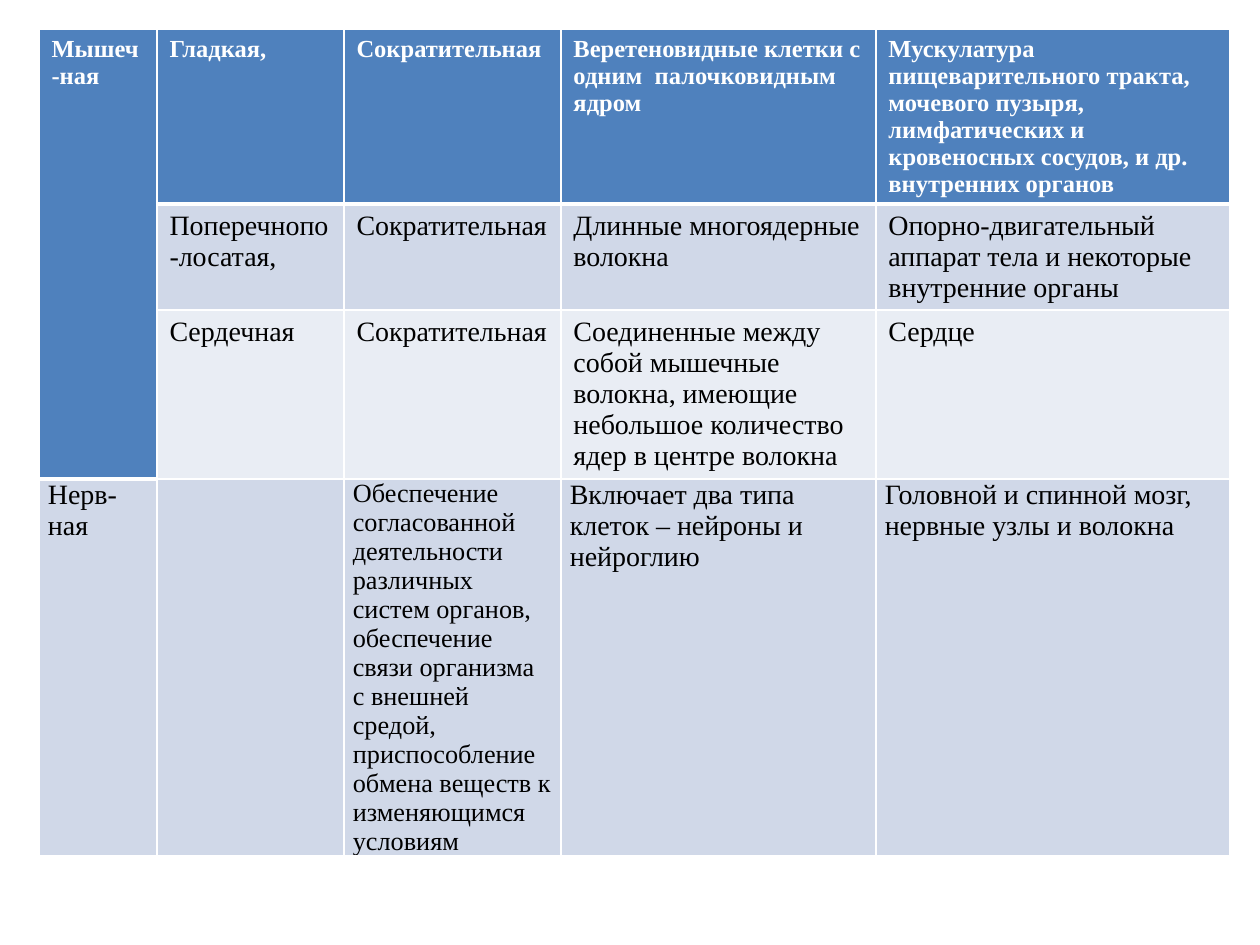
from lxml import etree
from pptx import Presentation
from pptx import util as u
from pptx.dml.color import RGBColor
from pptx.oxml import ns

PX = 914400 // 126
FONT = "Times New Roman"
COLORS = {"header": "4F81BD", "band": "D0D8E8", "light": "E9EDF4",
          "border": "FFFFFF", "heading": "FFFFFF", "body": "000000"}
COLUMN_WIDTHS = [118, 187, 217, 315, 354]
ROW_HEIGHTS = [175, 106, 169, 376]
ROW_FILLS = ["header", "band", "light", "band"]
TISSUES = [
    ["Мышеч-ная", "Гладкая,", "Сократительная",
     "Веретеновидные клетки с одним  палочковидным ядром",
     "Мускулатура пищеварительного тракта, мочевого пузыря, лимфатических и "
     "кровеносных сосудов, и др. внутренних органов"],
    ["", "Поперечнопо-лосатая,", "Сократительная",
     "Длинные многоядерные волокна",
     "Опорно-двигательный аппарат тела и некоторые внутренние органы"],
    ["", "Сердечная", "Сократительная",
     "Соединенные между собой мышечные волокна, имеющие небольшое количество "
     "ядер в центре волокна",
     "Сердце"],
    ["Нерв-ная", "",
     "Обеспечение согласованной деятельности различных систем органов, "
     "обеспечение связи организма с внешней средой, приспособление обмена "
     "веществ к изменяющимся условиям",
     "Включает два типа клеток – нейроны и нейроглию",
     "Головной и спинной мозг, нервные узлы и волокна"],
]


def px(length):
    return u.Emu(length * PX)


def write(cell, content, size=16, color="body", bold=False):
    run = cell.text_frame.paragraphs[0].add_run()
    run.text = content
    run.font.name = FONT
    run.font.size = u.Pt(size)
    run.font.bold = bold
    run.font.color.rgb = RGBColor.from_string(COLORS[color])


def fill_cell(cell, color):
    cell.fill.solid()
    cell.fill.fore_color.rgb = RGBColor.from_string(COLORS[color])


def add_borders(cell, bottom=1):
    properties = cell._tc.get_or_add_tcPr()
    widths = {"lnL": 1, "lnR": 1, "lnT": 1, "lnB": bottom}
    for position, (side, width) in enumerate(widths.items()):
        line = etree.Element(ns.qn(f"a:{side}"), w=str(u.Pt(width)))
        solid = etree.SubElement(line, ns.qn("a:solidFill"))
        etree.SubElement(solid, ns.qn("a:srgbClr"), val=COLORS["border"])
        properties.insert(position, line)


def add_tissue_table(slide):
    frame = slide.shapes.add_table(
        len(ROW_HEIGHTS), len(COLUMN_WIDTHS), px(39), px(29),
        px(sum(COLUMN_WIDTHS)), px(sum(ROW_HEIGHTS)))
    tissues = frame.table
    tissues.horz_banding = False
    for column, width in zip(tissues.columns, COLUMN_WIDTHS):
        column.width = px(width)
    for row, height in zip(tissues.rows, ROW_HEIGHTS):
        row.height = px(height)
    tissues.cell(0, 0).merge(tissues.cell(2, 0))

    last = len(TISSUES) - 1
    for r, entries in enumerate(TISSUES):
        for c, content in enumerate(entries):
            cell = tissues.cell(r, c)
            heading = r == 0 or (c == 0 and r < last)
            fill_cell(cell, "header" if heading else ROW_FILLS[r])
            add_borders(cell, bottom=3 if heading else 1)
            if r == last:
                cell.margin_left = cell.margin_right = px(9)
                cell.margin_top = cell.margin_bottom = 0
            if heading and content:
                write(cell, content, size=14, color="heading", bold=True)
            elif content:
                write(cell, content, size=15 if (r, c) == (last, 2) else 16)


def main():
    deck = Presentation()
    deck.slide_width, deck.slide_height = px(1260), px(945)
    add_tissue_table(deck.slides.add_slide(deck.slide_layouts[6]))
    deck.save("out.pptx")


if __name__ == "__main__":
    main()
